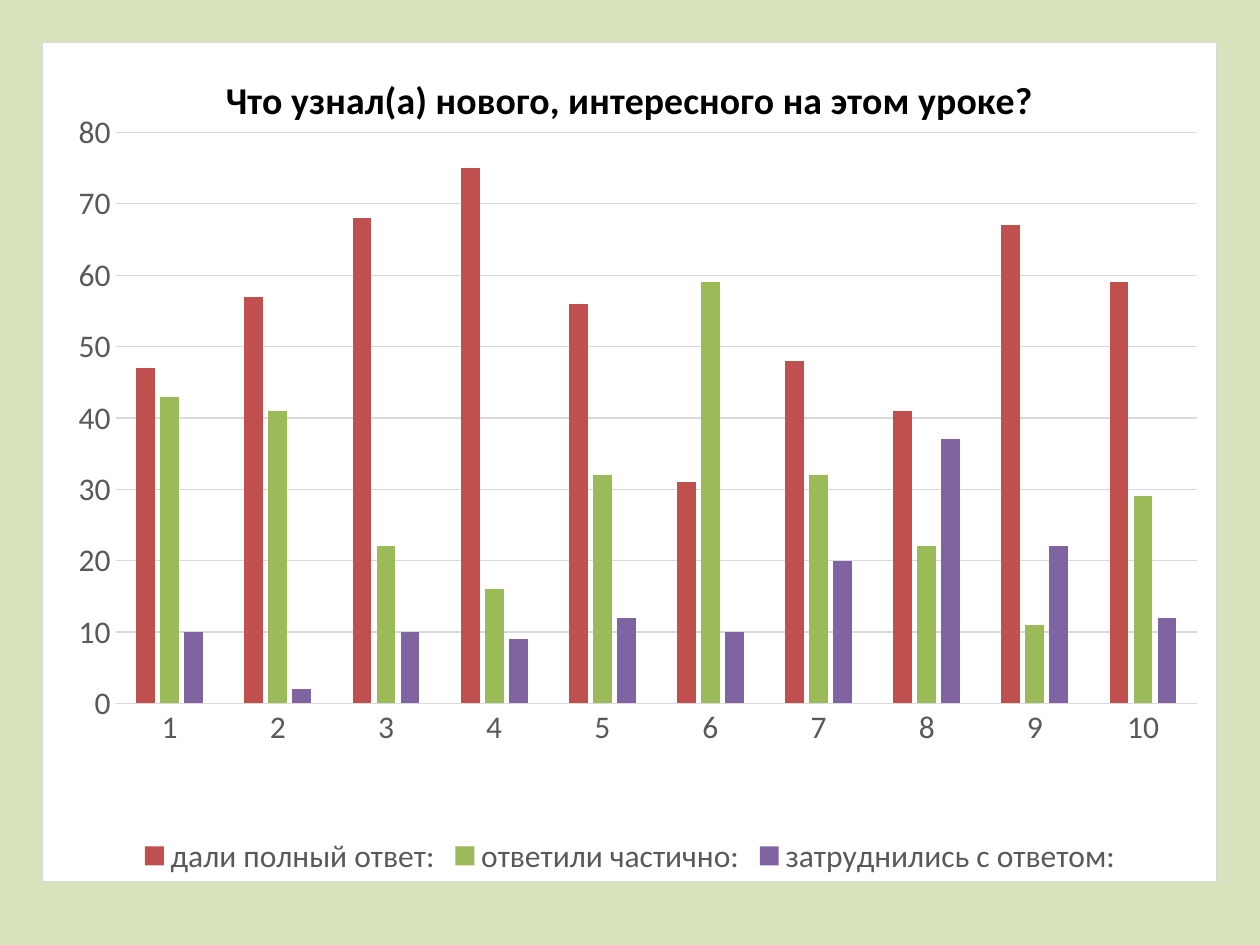
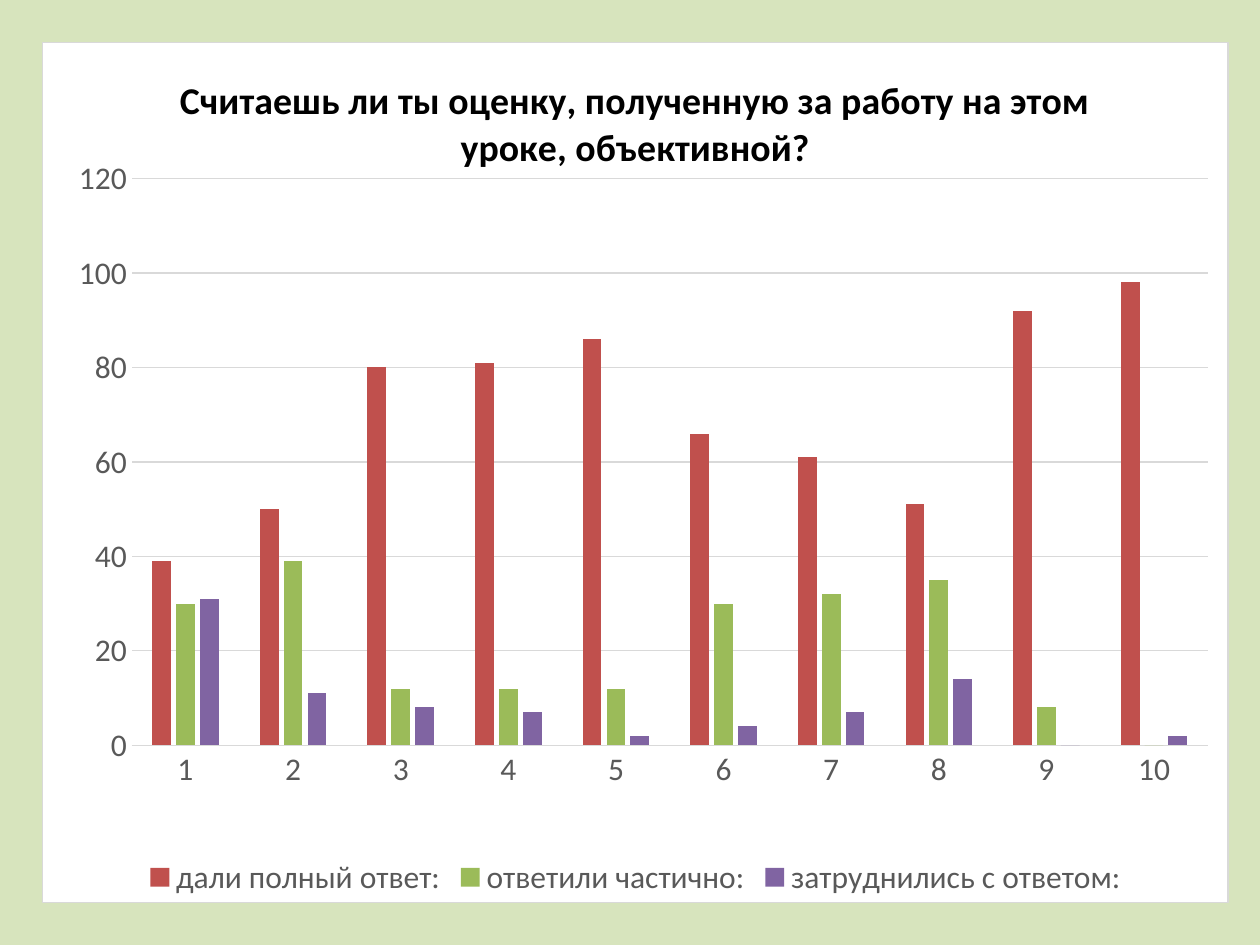
from lxml.etree import SubElement as Sub
from pptx import Presentation
from pptx.chart.data import CategoryChartData as Data
from pptx.dml.color import RGBColor as RGB
from pptx.enum.chart import XL_CHART_TYPE as Kind
from pptx.enum.chart import XL_LEGEND_POSITION as Spot
from pptx.enum.chart import XL_TICK_MARK as Tick
from pptx.oxml import parse_xml
from pptx.oxml.ns import nsdecls, qn
from pptx.util import Cm, Pt

FONT = "Calibri"
HUES = {"back": "D7E4BD", "panel": "FFFFFF", "rule": "D9D9D9",
        "title": "000000", "label": "595959"}
# Each answer and the colour of its bars
ANSWERS = {"дали полный ответ:": "C0504D",
           "ответили частично:": "9BBB59",
           "затруднились с ответом:": "8064A2"}
# Question, chart box in cm, inner plot as shares of the box, values per answer
POLLS = [
    ("Что узнал(а) нового, интересного на этом уроке?",
     (0.85, 0.85, 23.7, 16.93), (0.062, 0.107, 0.921, 0.681),
     [(47, 57, 68, 75, 56, 31, 48, 41, 67, 59),
      (43, 41, 22, 16, 32, 59, 32, 22, 11, 29),
      (10, 2, 10, 9, 12, 10, 20, 37, 22, 12)]),
    ("Считаешь ли ты оценку, полученную за работу на этом уроке, объективной?",
     (0.85, 0.85, 23.92, 17.36), (0.075, 0.158, 0.908, 0.659),
     [(39, 50, 80, 81, 86, 66, 61, 51, 92, 98),
      (30, 39, 12, 12, 12, 30, 32, 35, 8, 0),
      (31, 11, 8, 7, 2, 4, 7, 14, 0, 2)]),
]


def style(font, size, hue, bold=False):
    font.name, font.size, font.bold = FONT, Pt(size), bold
    font.color.rgb = RGB.from_string(HUES[hue])


def rule(line):
    line.color.rgb = RGB.from_string(HUES["rule"])
    line.width = Pt(0.75)


def fill_panel(chart):
    """Give the whole chart area its fill and thin border."""
    look = parse_xml(
        f'<c:spPr {nsdecls("c", "a")}>'
        f'<a:solidFill><a:srgbClr val="{HUES["panel"]}"/></a:solidFill>'
        f'<a:ln w="{Pt(0.75)}"><a:solidFill><a:srgbClr val="{HUES["rule"]}"/>'
        '</a:solidFill></a:ln></c:spPr>')
    chart.element.find(qn("c:chart")).addnext(look)


def place_plot(chart, shares):
    """Fix the inner plot area at shares of the chart box."""
    area = chart.element.find(".//" + qn("c:plotArea"))
    for old in area.findall(qn("c:layout")):
        area.remove(old)
    layout = parse_xml(f'<c:layout {nsdecls("c")}/>')
    area.insert(0, layout)
    manual = Sub(layout, qn("c:manualLayout"))
    names = ("layoutTarget", "xMode", "yMode", "x", "y", "w", "h")
    for name, val in zip(names, ("inner", "edge", "edge", *shares)):
        Sub(manual, qn("c:" + name)).set("val", str(val))


def add_title(chart, text):
    chart.has_title = True
    chart.chart_title.include_in_layout = False
    par = chart.chart_title.text_frame.paragraphs[0]
    par.text = text
    style(par.font, 21.6, "title", True)


def style_axes(chart):
    for axis in (chart.category_axis, chart.value_axis):
        axis.major_tick_mark = axis.minor_tick_mark = Tick.NONE
        style(axis.tick_labels.font, 18, "label")
    rule(chart.category_axis.format.line)
    chart.value_axis.format.line.fill.background()
    chart.value_axis.has_major_gridlines = True
    rule(chart.value_axis.major_gridlines.format.line)


def style_bars(plot):
    plot.gap_width, plot.overlap = 219, -27
    plot.vary_by_categories = False
    for bars, hue in zip(plot.series, ANSWERS.values()):
        bars.format.fill.solid()
        bars.format.fill.fore_color.rgb = RGB.from_string(hue)
        bars.invert_if_negative = False


def add_legend(chart):
    chart.has_legend = True
    chart.legend.position = Spot.BOTTOM
    chart.legend.include_in_layout = False
    style(chart.legend.font, 18, "label")


def add_poll(deck, title, box, shares, rows):
    """Add one slide with the column chart of a question."""
    slide = deck.slides.add_slide(deck.slide_layouts[6])
    slide.background.fill.solid()
    slide.background.fill.fore_color.rgb = RGB.from_string(HUES["back"])
    data = Data()
    data.categories = [str(n + 1) for n in range(len(rows[0]))]
    for name, vals in zip(ANSWERS, rows):
        data.add_series(name, vals)
    frame = slide.shapes.add_chart(Kind.COLUMN_CLUSTERED, *map(Cm, box), data)
    chart = frame.chart
    style(chart.font, 18, "title")
    fill_panel(chart)
    add_title(chart, title)
    place_plot(chart, shares)
    style_axes(chart)
    style_bars(chart.plots[0])
    add_legend(chart)


def main():
    deck = Presentation()
    deck.slide_width, deck.slide_height = Cm(25.4), Cm(19.05)
    for poll in POLLS:
        add_poll(deck, *poll)
    deck.save("out.pptx")


if __name__ == "__main__":
    main()
